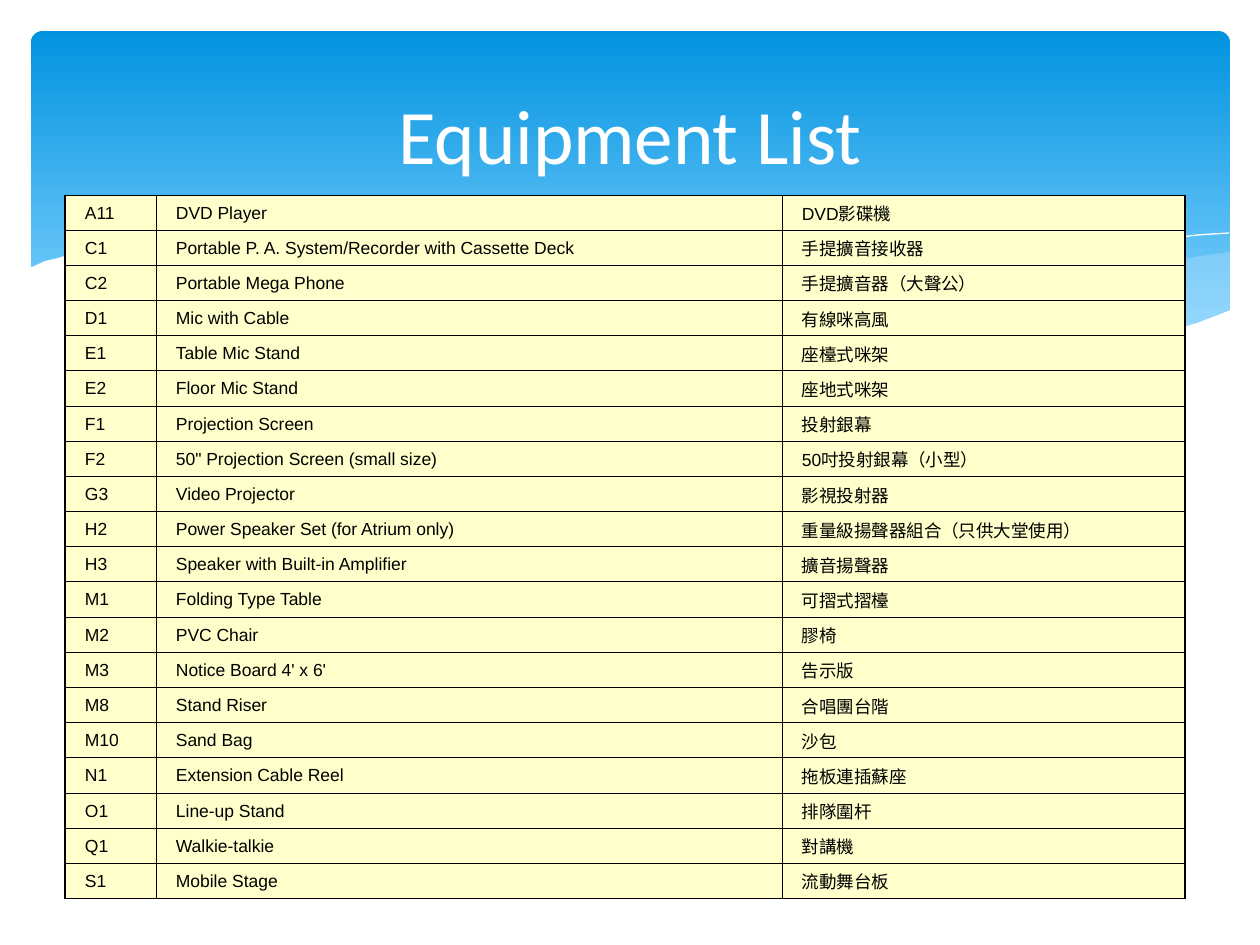
from dataclasses import dataclass
from itertools import groupby

from pptx import Presentation
from pptx.dml.color import RGBColor
from pptx.enum.shapes import MSO_SHAPE
from pptx.enum.text import MSO_ANCHOR, PP_ALIGN
from pptx.oxml.ns import qn
from pptx.util import Emu, Pt
from lxml import etree

ROUND = MSO_SHAPE.ROUNDED_RECTANGLE
MIDDLE = MSO_ANCHOR.MIDDLE
CENTER = PP_ALIGN.CENTER
SCALE = 914400 / 126


@dataclass(frozen=True)
class Theme:
    white: str = "FFFFFF"
    black: str = "000000"
    deep: str = "0293E0"
    sky: str = "83D3FE"
    mist: str = "C6E7FC"
    cream: str = "FFFFCC"
    head: str = "Calibri"
    body: str = "Arial"
    cjk: str = "Noto Sans CJK SC"
    big: int = 44
    small: int = 10
    thin: float = 0.5
    thick: float = 1


THEME = Theme()

VEIL = [(1229, 252), (1194, 257), (1160, 265), (1123, 272), (1085, 281),
        (1014, 299), (949, 312), (890, 324), (833, 334), (871, 339),
        (906, 343), (954, 348), (1012, 350), (1063, 349), (1110, 344),
        (1150, 336), (1187, 326), (1230, 311), (1230, 252)]
SWELL = [(1125, 344), (1055, 334), (977, 320), (890, 302), (793, 280),
         (717, 262), (648, 249), (586, 241), (529, 236), (455, 233),
         (394, 237), (360, 241), (431, 251), (509, 266), (566, 280),
         (668, 302), (757, 321), (838, 335), (910, 345), (989, 350),
         (1056, 350)]
CREST = [(389, 246), (413, 242), (445, 238), (488, 236), (546, 236),
         (616, 239), (701, 248), (801, 262), (876, 276), (958, 294),
         (1047, 316), (1143, 343)]
RIPPLE = [(772, 324), (823, 310), (876, 296), (942, 281), (1016, 265),
          (1091, 251), (1128, 244), (1164, 239), (1198, 235), (1229, 233)]
FOAM = [(1231, 310), (1197, 323), (1159, 334), (1118, 341), (1071, 346),
        (1019, 349), (959, 347), (890, 340), (816, 330), (730, 315),
        (633, 294), (563, 277), (493, 260), (428, 248), (368, 239),
        (315, 234), (266, 232), (223, 232), (184, 233), (150, 236),
        (119, 241), (96, 246), (74, 253), (58, 258), (45, 261), (32, 267),
        (29, 268), (29, 415), (1231, 415)]

COLS = [91, 626, 403]
ITEMS = [
    ("A11", "DVD Player", "DVD影碟機"),
    ("C1", "Portable P. A. System/Recorder with Cassette Deck", "手提擴音接收器"),
    ("C2", "Portable Mega Phone", "手提擴音器（大聲公）"),
    ("D1", "Mic with Cable", "有線咪高風"),
    ("E1", "Table Mic Stand", "座檯式咪架"),
    ("E2", "Floor Mic Stand", "座地式咪架"),
    ("F1", "Projection Screen", "投射銀幕"),
    ("F2", '50" Projection Screen (small size)', "50吋投射銀幕（小型）"),
    ("G3", "Video Projector", "影視投射器"),
    ("H2", "Power Speaker Set (for Atrium only)", "重量級揚聲器組合（只供大堂使用）"),
    ("H3", "Speaker with Built-in Amplifier", "擴音揚聲器"),
    ("M1", "Folding Type Table", "可摺式摺檯"),
    ("M2", "PVC Chair", "膠椅"),
    ("M3", "Notice Board 4' x 6'", "告示版"),
    ("M8", "Stand Riser", "合唱團台階"),
    ("M10", "Sand Bag", "沙包"),
    ("N1", "Extension Cable Reel", "拖板連插蘇座"),
    ("O1", "Line-up Stand", "排隊圍杆"),
    ("Q1", "Walkie-talkie", "對講機"),
    ("S1", "Mobile Stage", "流動舞台板"),
]


def px(n):
    return Emu(round(n * SCALE))


def rgb(code):
    return RGBColor.from_string(code)


def apply(item, values):
    for key, value in values.items():
        setattr(item, key, value)


def add_run(para, text, font, size, color):
    run = para.add_run()
    run.text = text
    apply(run.font, {"name": font, "size": Pt(size)})
    run.font.color.rgb = rgb(color)
    return run


def add_panel(slide):
    panel = slide.shapes.add_shape(ROUND, px(31), px(31), px(1199), px(340))
    panel.adjustments[0] = 0.034
    panel.shadow.inherit = False
    panel.line.fill.background()
    panel.fill.gradient()
    panel.fill.gradient_angle = 270
    stops = zip(panel.fill.gradient_stops, (THEME.deep, THEME.sky), (0, 0.9))
    for stop, color, place in stops:
        stop.color.rgb = rgb(color)
        stop.position = place


def add_wave(group, points, fill=None, alpha=100):
    """Draw a filled area, or an open white hairline if there is no fill."""
    pen = group.shapes.build_freeform(*points[0], scale=SCALE)
    pen.add_line_segments(points[1:], close=fill is not None)
    wave = pen.convert_to_shape()
    wave.shadow.inherit = False
    if fill is None:
        wave.fill.background()
        wave.line.color.rgb = rgb(THEME.white)
        wave.line.width = Pt(0)
        return
    wave.line.fill.background()
    wave.fill.solid()
    wave.fill.fore_color.rgb = rgb(fill)
    if alpha < 100:
        color = wave._element.spPr.find(".//" + qn("a:srgbClr"))
        etree.SubElement(color, qn("a:alpha"), val=str(alpha * 1000))


def add_title(slide, text):
    frame = slide.shapes.add_textbox(px(63), px(47), px(1134), px(173)).text_frame
    apply(frame, {"word_wrap": True, "vertical_anchor": MIDDLE})
    para = frame.paragraphs[0]
    para.alignment = CENTER
    add_run(para, text, THEME.head, THEME.big, THEME.white)


def add_edge(cell, side, width):
    props = cell._tc.get_or_add_tcPr()
    line = etree.SubElement(props, qn("a:ln" + side), w=str(Pt(width)))
    fill = etree.SubElement(line, qn("a:solidFill"))
    etree.SubElement(fill, qn("a:srgbClr"), val=THEME.black)


def fill_cell(cell, text, outer):
    """Style one cell; the sides named in outer get the thick line."""
    apply(cell, {"margin_left": px(20), "margin_top": px(1),
                 "margin_right": px(1), "margin_bottom": 0,
                 "vertical_anchor": MIDDLE})
    for side in "LRTB":
        add_edge(cell, side, THEME.thick if side in outer else THEME.thin)
    cell.fill.solid()
    cell.fill.fore_color.rgb = rgb(THEME.cream)
    para = cell.text_frame.paragraphs[0]
    for plain, chars in groupby(text, str.isascii):
        font = THEME.body if plain else THEME.cjk
        run = add_run(para, "".join(chars), font, THEME.small, THEME.black)
        if not plain:
            etree.SubElement(run.font._element, qn("a:ea"), typeface=font)


def add_list(slide, items):
    high = px(704)
    table = slide.shapes.add_table(len(items), len(COLS), px(65), px(195),
                                   px(sum(COLS)), high).table
    apply(table, {"first_row": False, "horz_banding": False})
    for col, width in zip(table.columns, COLS):
        col.width = px(width)
    for i, item in enumerate(items):
        table.rows[i].height = high // len(items)
        base = "B" if i == len(items) - 1 else ""
        for j, (text, side) in enumerate(zip(item, ("L", "", "R"))):
            fill_cell(table.cell(i, j), text, side + base)


def main():
    deck = Presentation()
    apply(deck, {"slide_width": px(1260), "slide_height": px(945)})
    slide = deck.slides.add_slide(deck.slide_layouts[6])
    add_panel(slide)
    group = slide.shapes.add_group_shape()
    add_wave(group, VEIL, THEME.mist, 29)
    add_wave(group, SWELL, THEME.mist, 40)
    add_wave(group, CREST)
    add_wave(group, RIPPLE)
    add_wave(group, FOAM, THEME.white)
    add_title(slide, "Equipment List")
    add_list(slide, ITEMS)
    deck.save("out.pptx")


if __name__ == "__main__":
    main()
